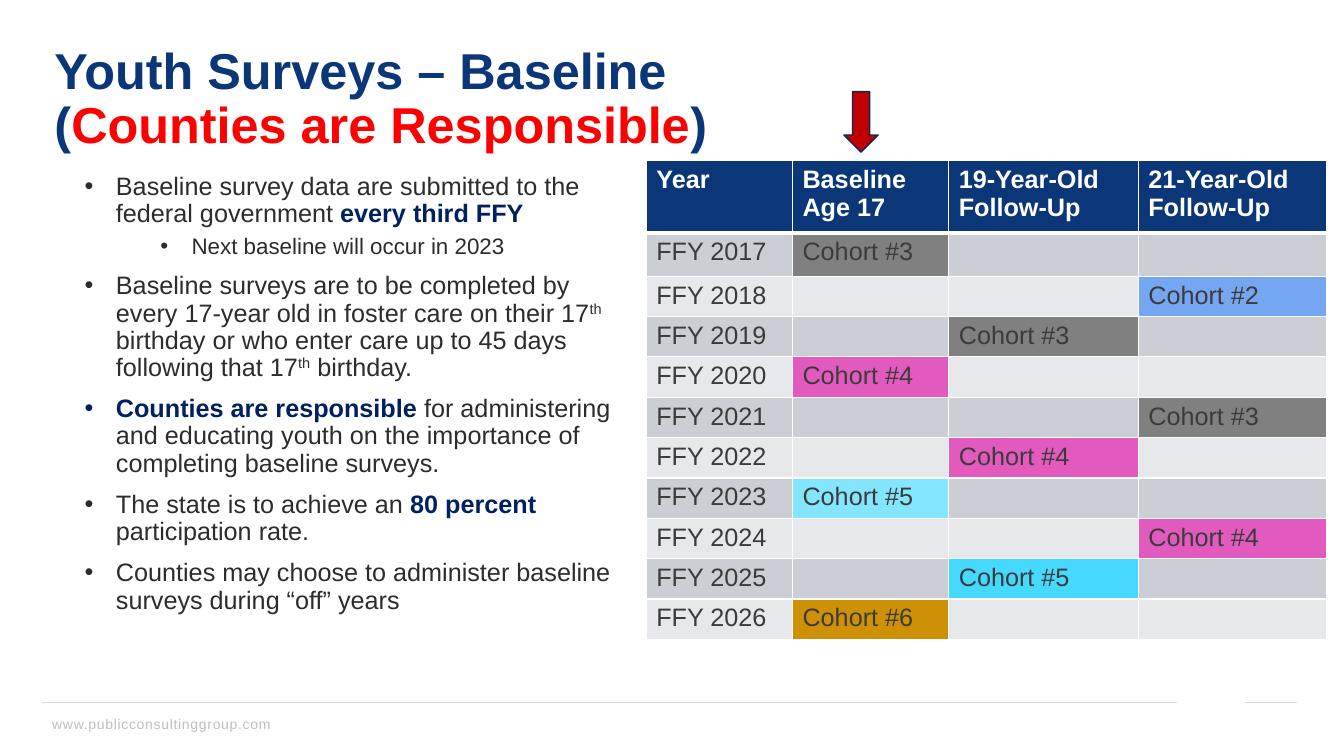
from dataclasses import dataclass

from lxml.etree import SubElement
from pptx import Presentation
from pptx.dml.color import RGBColor
from pptx.enum.shapes import MSO_CONNECTOR as Connector, MSO_SHAPE as Shape
from pptx.enum.text import MSO_ANCHOR as Anchor, MSO_AUTO_SIZE as AutoSize, PP_ALIGN as Align
from pptx.oxml.ns import qn
from pptx.util import Inches, Pt


@dataclass(frozen=True)
class Theme:
    font: str = "Arial"
    navy: str = "0B3677"
    red: str = "FF0000"
    ink: str = "2C2C2C"
    strong: str = "002060"
    cell_ink: str = "3B3B3B"
    white: str = "FFFFFF"
    bands: tuple = ("CCCED6", "E7E8EC")
    arrow: str = "C00000"
    arrow_line: str = "082858"
    rule: str = "D9D9D9"
    footer: str = "BFBFBF"
    title_size: int = 36
    text_size: int = 18
    sub_size: int = 16
    footer_size: int = 10


T = Theme()
WIDTH, HEIGHT = 13.33, 7.5

PLAIN, STRONG, SUPER = "plain", "strong", "super"
BULLETS = [
    (0, [("Baseline survey data are submitted to the federal government ", PLAIN),
         ("every third FFY", STRONG)]),
    (1, [("Next baseline will occur in 2023", PLAIN)]),
    (0, [("Baseline surveys are to be completed by every 17-year old in foster care "
          "on their 17", PLAIN), ("th", SUPER),
         (" birthday or who enter care up to 45 days following that 17", PLAIN),
         ("th", SUPER), (" birthday.", PLAIN)]),
    (0, [("Counties are responsible ", STRONG),
         ("for administering and educating youth on the importance of completing "
          "baseline surveys.", PLAIN)]),
    (0, [("The state is to achieve an ", PLAIN), ("80 percent ", STRONG),
         ("participation rate.", PLAIN)]),
    (0, [("Counties may choose to administer baseline surveys during “off” years", PLAIN)]),
]

HEADERS = [["Year"], ["Baseline", "Age 17"], ["19-Year-Old", "Follow-Up"],
           ["21-Year-Old", "Follow-Up"]]
YEARS = range(2017, 2027)
# Cohort: baseline year, then a fill for baseline, 19-year-old and 21-year-old surveys
COHORTS = {
    2: (2014, ["74A6F2"] * 3),
    3: (2017, ["808080"] * 3),
    4: (2020, ["E35ABF"] * 3),
    5: (2023, ["84E5FF", "46D9FF", "46D9FF"]),
    6: (2026, ["CE9105"] * 3),
}


def rgb(value):
    return RGBColor.from_string(value)


def place(sp, box):
    sp.left, sp.top, sp.width, sp.height = map(Inches, box)


def add_run(p, text, size, color, bold=False):
    r = p.add_run()
    r.text = text
    f = r.font
    f.name, f.size, f.bold = T.font, Pt(size), bold
    f.color.rgb = rgb(color)
    return r


def add_title(slide, box):
    sp = slide.shapes.title
    place(sp, box)
    tf = sp.text_frame
    tf.auto_size, tf.vertical_anchor = AutoSize.NONE, Anchor.MIDDLE
    p = tf.paragraphs[0]
    p.alignment, p.line_spacing = Align.LEFT, 0.9
    add_run(p, "Youth Surveys – Baseline", T.title_size, T.navy, True)
    p.add_line_break()
    for text, color in (("(", T.navy), ("Counties are Responsible", T.red), (")", T.navy)):
        add_run(p, text, T.title_size, color, True)


def set_bullet(p, indent):
    pPr = p._p.get_or_add_pPr()
    pPr.set("marL", str(Inches(indent)))
    pPr.set("indent", str(Inches(-0.31)))
    SubElement(pPr, qn("a:buFont")).set("typeface", T.font)
    SubElement(pPr, qn("a:buChar")).set("char", "•")


def add_bullets(slide, box):
    sp = slide.placeholders[1]
    place(sp, box)
    tf = sp.text_frame
    tf.auto_size = AutoSize.NONE
    for i, (level, runs) in enumerate(BULLETS):
        p = tf.add_paragraph() if i else tf.paragraphs[0]
        set_bullet(p, (0.31, 1.06)[level])
        p.level, p.line_spacing = level, 0.9
        p.space_before = Pt((10, 5)[level] if i else 0)
        for text, style in runs:
            strong = style == STRONG
            r = add_run(p, text, (T.text_size, T.sub_size)[level],
                        T.strong if strong else T.ink, strong)
            if style == SUPER:
                r._r.get_or_add_rPr().set("baseline", "30000")


def set_borders(cell, bottom):
    """White cell edges; these elements must come before the cell's fill."""
    tcPr = cell._tc.get_or_add_tcPr()
    for side, width in (("L", 1), ("R", 1), ("T", 1), ("B", bottom)):
        ln = SubElement(tcPr, qn(f"a:ln{side}"), w=str(Pt(width)))
        fill = SubElement(ln, qn("a:solidFill"))
        SubElement(fill, qn("a:srgbClr")).set("val", T.white)


def fill_cell(cell, lines, fill, color, bold=False, bottom=1):
    set_borders(cell, bottom)
    cell.fill.solid()
    cell.fill.fore_color.rgb = rgb(fill)
    tf = cell.text_frame
    for i, line in enumerate(lines):
        p = tf.add_paragraph() if i else tf.paragraphs[0]
        add_run(p, line, T.text_size, color, bold)


def add_schedule(slide, box):
    """Survey years by age; each cohort is surveyed every second year."""
    table = slide.shapes.add_table(len(YEARS) + 1, len(HEADERS), *map(Inches, box)).table
    for column, width in zip(table.columns, (1.45, 1.55, 1.88, 1.87)):
        column.width = Inches(width)
    for row, height in zip(table.rows, [0.72, 0.43] + [0.4] * (len(YEARS) - 1)):
        row.height = Inches(height)
    for col, lines in enumerate(HEADERS):
        fill_cell(table.cell(0, col), lines, T.navy, T.white, True, bottom=3)
    surveys = {(first + 2 * step, step + 1): (f"Cohort #{number}", fill)
               for number, (first, fills) in COHORTS.items()
               for step, fill in enumerate(fills)}
    for row, year in enumerate(YEARS, 1):
        band = T.bands[(row - 1) % 2]
        fill_cell(table.cell(row, 0), [f"FFY {year}"], band, T.cell_ink)
        for col in range(1, len(HEADERS)):
            text, fill = surveys.get((year, col), ("", band))
            fill_cell(table.cell(row, col), [text] if text else [], fill, T.cell_ink)


def add_baseline_arrow(slide, box):
    sp = slide.shapes.add_shape(Shape.DOWN_ARROW, *map(Inches, box))
    sp.shadow.inherit = False
    sp.fill.solid()
    sp.fill.fore_color.rgb = rgb(T.arrow)
    sp.line.color.rgb = rgb(T.arrow_line)
    sp.line.width = Pt(1)


def add_footer(slide, box):
    left, top, width, height = box
    for start, end in ((0, 11.25), (11.93, width)):
        line = slide.shapes.add_connector(
            Connector.STRAIGHT, Inches(left + start), Inches(top),
            Inches(left + end), Inches(top))
        line.line.color.rgb = rgb(T.rule)
        line.line.width = Pt(0.5)
        SubElement(line._element.spPr, qn("a:effectLst"))
    sp = slide.shapes.add_textbox(*map(Inches, (left, top + 0.08, 3.87, height - 0.08)))
    tf = sp.text_frame
    tf.word_wrap = True
    r = add_run(tf.paragraphs[0], "www.publicconsultinggroup.com", T.footer_size, T.footer)
    r._r.get_or_add_rPr().set("spc", "50")


def main():
    prs = Presentation()
    prs.slide_width, prs.slide_height = Inches(WIDTH), Inches(HEIGHT)
    slide = prs.slides.add_slide(prs.slide_layouts[1])
    add_footer(slide, (0.42, 6.97, 12.44, 0.36))
    add_title(slide, (0.44, 0.4, 12.46, 1.19))
    add_bullets(slide, (0.74, 1.67, 5.49, 5.37))
    add_schedule(slide, (6.41, 1.59, 6.75, 4.75))
    add_baseline_arrow(slide, (8.37, 0.91, 0.34, 0.6))
    prs.save("out.pptx")


if __name__ == "__main__":
    main()
